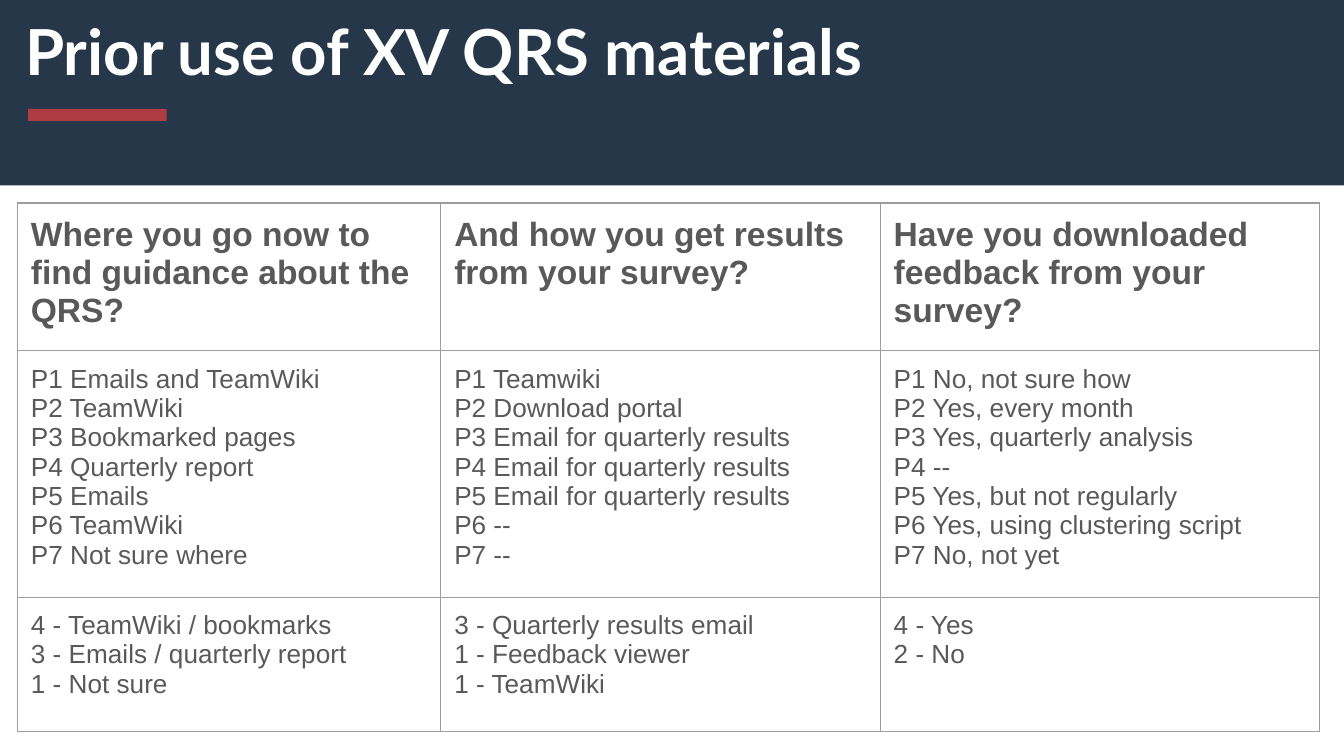
import dataclasses

import lxml.etree
import pptx
import pptx.dml.color
import pptx.enum.shapes
import pptx.enum.text
import pptx.oxml.ns
import pptx.util

# The page is a grid of 100 columns by 56.25 rows of square units.
UNIT = pptx.util.Inches(0.1)
PAGE_COLUMNS, PAGE_ROWS = 100, 56.25


@dataclasses.dataclass(frozen=True)
class Theme:
    banner: str = "26374A"
    accent: str = "AF3C43"
    title: str = "FFFFFF"
    text: str = "595959"
    border: str = "9E9E9E"
    title_font: str = "Lato"
    body_font: str = "Arial"
    title_size: int = 34
    heading_size: int = 18
    body_size: int = 14
    heading_space: int = 10
    border_width: float = 0.75


THEME = Theme()


@dataclasses.dataclass(frozen=True)
class Box:
    """An area in grid units."""
    left: float
    top: float
    width: float
    height: float

    def inner(self, left, top, width, height):
        return Box(self.left + left, self.top + top, width, height)

    def lengths(self):
        return [round(value * UNIT)
                for value in (self.left, self.top, self.width, self.height)]


TITLE = "Prior use of XV QRS materials"
HEADINGS = [
    "Where you go now to find guidance about the QRS?",
    "And how you get results from your survey?",
    "Have you downloaded feedback from your survey?",
]
ANSWERS = [
    ["Emails and TeamWiki", "TeamWiki", "Bookmarked pages", "Quarterly report",
     "Emails", "TeamWiki", "Not sure where"],
    ["Teamwiki", "Download portal", "Email for quarterly results",
     "Email for quarterly results", "Email for quarterly results", "--", "--"],
    ["No, not sure how", "Yes, every month", "Yes, quarterly analysis", "--",
     "Yes, but not regularly", "Yes, using clustering script", "No, not yet"],
]
TOTALS = [
    ["4 - TeamWiki / bookmarks", "3 - Emails / quarterly report", "1 - Not sure"],
    ["3 - Quarterly results email", "1 - Feedback viewer", "1 - TeamWiki"],
    ["4 - Yes", "2 - No"],
]
COLUMN_WIDTHS = [31.5, 32.7, 32.7]
ROW_HEIGHTS = [11, 18.3, 10]


def color(value):
    return pptx.dml.color.RGBColor.from_string(value)


def set_margins(target):
    target.margin_left = target.margin_right = UNIT
    target.margin_top = target.margin_bottom = UNIT


def write_lines(frame, lines, font_name, size, ink, bold=False, space_before=0):
    frame.word_wrap = True
    frame.text = "\n".join(lines)
    for para in frame.paragraphs:
        para.alignment = pptx.enum.text.PP_ALIGN.LEFT
        para.space_before = pptx.util.Pt(space_before)
        for span in para.runs:
            span.font.name = font_name
            span.font.size = pptx.util.Pt(size)
            span.font.bold = bold
            span.font.color.rgb = color(ink)


def add_bar(page, box, fill):
    bar = page.shapes.add_shape(
        pptx.enum.shapes.MSO_SHAPE.RECTANGLE, *box.lengths())
    bar.shadow.inherit = False
    bar.fill.solid()
    bar.fill.fore_color.rgb = color(fill)
    bar.line.fill.background()


def add_banner(page, box):
    add_bar(page, box, THEME.banner)
    title = page.shapes.add_textbox(*box.inner(1.4, 0, 86.1, 11.4).lengths())
    set_margins(title.text_frame)
    write_lines(title.text_frame, [TITLE], THEME.title_font, THEME.title_size,
                THEME.title, bold=True)
    add_bar(page, box.inner(2.6, 8.2, 10.3, 0.9), THEME.accent)


def set_borders(cell):
    properties = cell._tc.get_or_add_tcPr()
    qualified = pptx.oxml.ns.qn
    for index, side in enumerate(("lnL", "lnR", "lnT", "lnB")):
        line = lxml.etree.Element(
            qualified("a:" + side), w=str(pptx.util.Pt(THEME.border_width)))
        fill = lxml.etree.SubElement(line, qualified("a:solidFill"))
        lxml.etree.SubElement(fill, qualified("a:srgbClr"), val=THEME.border)
        properties.insert(index, line)


def add_answer_table(page, box):
    answers = [[f"P{number} {answer}" for number, answer in enumerate(column, 1)]
               for column in ANSWERS]
    rows = [[[heading] for heading in HEADINGS], answers, TOTALS]
    table = page.shapes.add_table(
        len(rows), len(HEADINGS), *box.lengths()).table
    table.first_row = table.horz_banding = False
    for column, width in zip(table.columns, COLUMN_WIDTHS):
        column.width = round(width * UNIT)
    for row, height in zip(table.rows, ROW_HEIGHTS):
        row.height = round(height * UNIT)

    heading_style = dict(size=THEME.heading_size, bold=True,
                         space_before=THEME.heading_space)
    body_style = dict(size=THEME.body_size)
    for row_index, row in enumerate(rows):
        style = body_style if row_index else heading_style
        for column_index, lines in enumerate(row):
            cell = table.cell(row_index, column_index)
            cell.fill.background()
            set_margins(cell)
            set_borders(cell)
            write_lines(cell.text_frame, lines, THEME.body_font,
                        ink=THEME.text, **style)


def main():
    deck = pptx.Presentation()
    deck.slide_width = round(PAGE_COLUMNS * UNIT)
    deck.slide_height = round(PAGE_ROWS * UNIT)
    page = deck.slides.add_slide(deck.slide_layouts[6])
    add_banner(page, Box(-0.5, -0.1, 100.5, 13.9))
    add_answer_table(
        page, Box(1.3, 15.1, sum(COLUMN_WIDTHS), sum(ROW_HEIGHTS)))
    deck.save("out.pptx")


if __name__ == "__main__":
    main()
